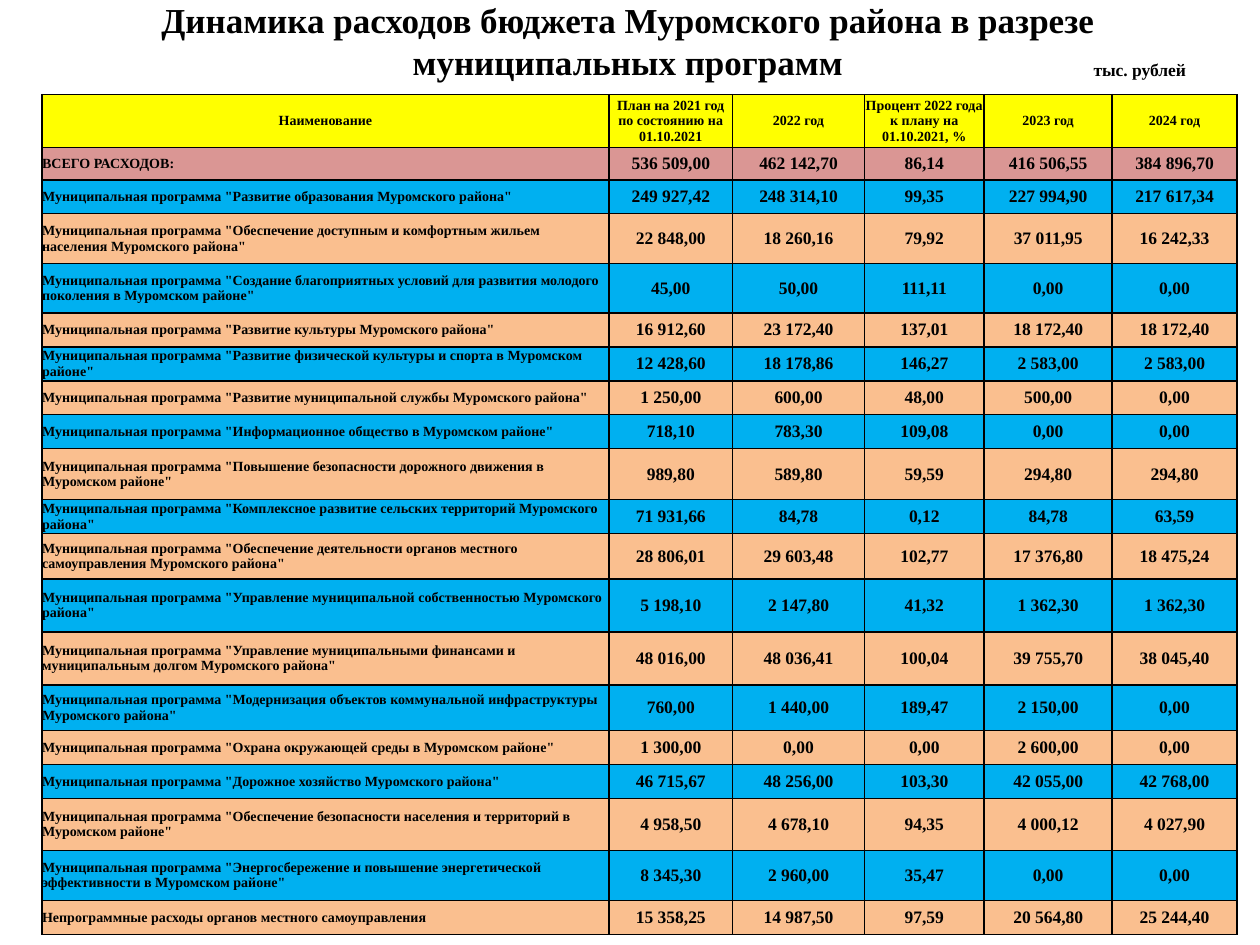
import dataclasses

import lxml.etree
import pptx
import pptx.dml.color
import pptx.enum.text
import pptx.oxml.ns
import pptx.util

Pt = pptx.util.Pt
Align = pptx.enum.text.PP_ALIGN
Anchor = pptx.enum.text.MSO_ANCHOR


@dataclasses.dataclass(frozen=True)
class Theme:
    font: str = "Times New Roman"
    ink: str = "000000"
    header: str = "FFFF00"
    total: str = "DA9694"
    bands: tuple = ("00B0F0", "FABF8F")
    title_size: int = 20
    value_size: int = 10
    label_size: int = 8
    border: int = 1


theme = Theme()


def set_text(frame, text, size, align, anchor, margins):
    frame.text = text
    frame.word_wrap = True
    frame.vertical_anchor = anchor
    frame.margin_left, frame.margin_top, frame.margin_right, frame.margin_bottom = map(Pt, margins)
    para = frame.paragraphs[0]
    para.alignment = align
    for span in para.runs:
        span.font.name = theme.font
        span.font.size = Pt(size)
        span.font.bold = True
        span.font.color.rgb = pptx.dml.color.RGBColor.from_string(theme.ink)


def set_borders(cell):
    properties = cell._tc.get_or_add_tcPr()
    for side in ("a:lnL", "a:lnR", "a:lnT", "a:lnB"):
        line = lxml.etree.SubElement(properties, pptx.oxml.ns.qn(side), w=str(Pt(theme.border)))
        fill = lxml.etree.SubElement(line, pptx.oxml.ns.qn("a:solidFill"))
        lxml.etree.SubElement(fill, pptx.oxml.ns.qn("a:srgbClr"), val=theme.ink)


column_widths = (324, 70.6, 75.4, 68.4, 73.2, 71.2)
rows = [
    (30.3, "Наименование", "План на 2021 год по состоянию на 01.10.2021|2022 год|Процент 2022 года к плану на 01.10.2021, %|2023 год|2024 год"),
    (18.6, "ВСЕГО РАСХОДОВ:", "536 509,00|462 142,70|86,14|416 506,55|384 896,70"),
    (19.2, "Развитие образования Муромского района", "249 927,42|248 314,10|99,35|227 994,90|217 617,34"),
    (28.6, "Обеспечение доступным и комфортным жильем населения Муромского района", "22 848,00|18 260,16|79,92|37 011,95|16 242,33"),
    (28.2, "Создание благоприятных условий для развития молодого поколения в Муромском районе", "45,00|50,00|111,11|0,00|0,00"),
    (19.4, "Развитие культуры Муромского района", "16 912,60|23 172,40|137,01|18 172,40|18 172,40"),
    (19.4, "Развитие физической культуры и спорта в Муромском районе", "12 428,60|18 178,86|146,27|2 583,00|2 583,00"),
    (19.4, "Развитие муниципальной службы Муромского района", "1 250,00|600,00|48,00|500,00|0,00"),
    (19.4, "Информационное общество в Муромском районе", "718,10|783,30|109,08|0,00|0,00"),
    (29.2, "Повышение безопасности дорожного движения в Муромском районе", "989,80|589,80|59,59|294,80|294,80"),
    (19.4, "Комплексное развитие сельских территорий Муромского района", "71 931,66|84,78|0,12|84,78|63,59"),
    (25.8, "Обеспечение деятельности органов местного самоуправления Муромского района", "28 806,01|29 603,48|102,77|17 376,80|18 475,24"),
    (30.3, "Управление муниципальной собственностью Муромского района", "5 198,10|2 147,80|41,32|1 362,30|1 362,30"),
    (30.3, "Управление муниципальными финансами и муниципальным долгом Муромского района", "48 016,00|48 036,41|100,04|39 755,70|38 045,40"),
    (26.2, "Модернизация объектов коммунальной инфраструктуры Муромского района", "760,00|1 440,00|189,47|2 150,00|0,00"),
    (19.4, "Охрана окружающей среды в Муромском районе", "1 300,00|0,00|0,00|2 600,00|0,00"),
    (19.4, "Дорожное хозяйство Муромского района", "46 715,67|48 256,00|103,30|42 055,00|42 768,00"),
    (29.6, "Обеспечение безопасности населения и территорий в Муромском районе", "4 958,50|4 678,10|94,35|4 000,12|4 027,90"),
    (28.7, "Энергосбережение и повышение энергетической эффективности в Муромском районе", "8 345,30|2 960,00|35,47|0,00|0,00"),
    (19.4, "Непрограммные расходы органов местного самоуправления", "15 358,25|14 987,50|97,59|20 564,80|25 244,40"),
]

deck = pptx.Presentation()
deck.slide_width, deck.slide_height = Pt(720), Pt(540)
page = deck.slides.add_slide(deck.slide_layouts[5])

title = page.shapes.title
title.left, title.top, title.width, title.height = Pt(10.8), Pt(-5.8), Pt(696), Pt(41.8)
set_text(title.text_frame, "Динамика расходов бюджета Муромского района в разрезе муниципальных программ",
         theme.title_size, Align.CENTER, Anchor.TOP, (20, 5, 20, 0))
title.text_frame.auto_size = pptx.enum.text.MSO_AUTO_SIZE.NONE

unit_box = page.shapes.add_textbox(Pt(617.8), Pt(30.2), Pt(95.8), Pt(19.4))
set_text(unit_box.text_frame, "тыс. рублей", theme.value_size, Align.LEFT, Anchor.TOP, (7.2, 3.6, 7.2, 3.6))

table_height = sum(height for height, name, values in rows)
table = page.shapes.add_table(len(rows), len(column_widths), Pt(24), Pt(54),
                              Pt(sum(column_widths)), Pt(table_height)).table
table.first_row = table.horz_banding = False
for column, width in zip(table.columns, column_widths):
    column.width = Pt(width)

for row_index, (height, name, values) in enumerate(rows):
    table.rows[row_index].height = Pt(height)
    is_header = row_index == 0
    is_program = 2 <= row_index < len(rows) - 1
    label = f'Муниципальная программа "{name}"' if is_program else name
    color = (theme.header, theme.total)[row_index] if row_index < 2 else theme.bands[row_index % 2]
    for column_index, text in enumerate([label, *values.split("|")]):
        cell = table.cell(row_index, column_index)
        is_label = is_header or column_index == 0
        size = theme.label_size if is_label else theme.value_size
        align = Align.LEFT if column_index == 0 and not is_header else Align.CENTER
        set_text(cell.text_frame, text, size, align, Anchor.MIDDLE, (0, 0, 0, 0))
        cell.vertical_anchor = Anchor.MIDDLE
        cell.margin_left = cell.margin_top = cell.margin_right = cell.margin_bottom = 0
        set_borders(cell)
        cell.fill.solid()
        cell.fill.fore_color.rgb = pptx.dml.color.RGBColor.from_string(color)

deck.save("out.pptx")
